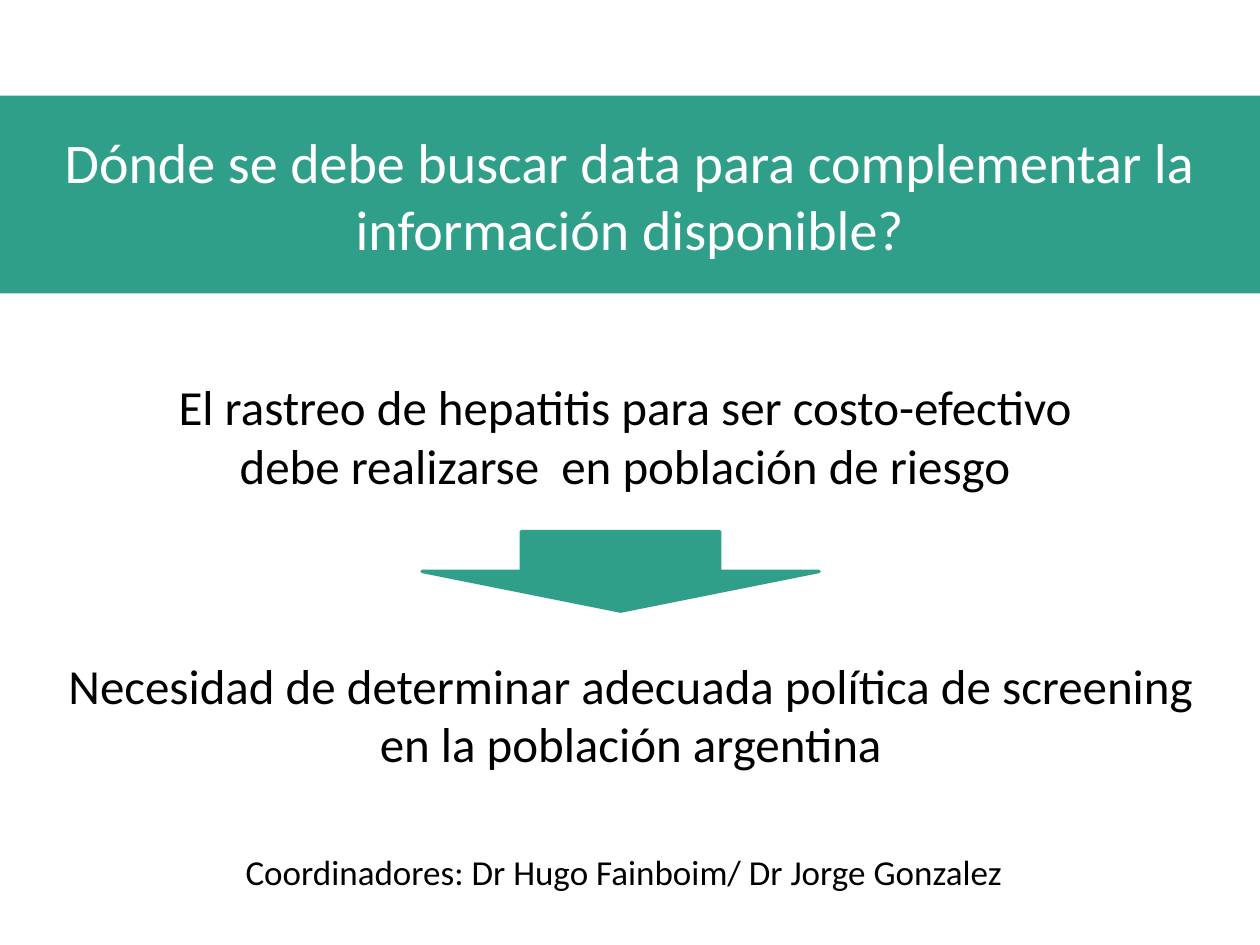
"""Build the slide on where to look for hepatitis screening data."""
from pptx import Presentation
from pptx.dml.color import RGBColor
from pptx.enum.shapes import MSO_SHAPE
from pptx.enum.text import MSO_ANCHOR, PP_ALIGN
from pptx.util import Inches, Pt

RECT, DOWN_ARROW = MSO_SHAPE.RECTANGLE, MSO_SHAPE.DOWN_ARROW
LEFT, CENTER = PP_ALIGN.LEFT, PP_ALIGN.CENTER
TOP, MIDDLE = MSO_ANCHOR.TOP, MSO_ANCHOR.MIDDLE
COLORS = {"green": "2F9F8A", "white": "FFFFFF", "black": "000000"}


def add_block(s, box, fill=None, shape=RECT):
    box = [Inches(v) for v in box]
    if fill is None:
        return s.shapes.add_textbox(*box)
    sp = s.shapes.add_shape(shape, *box)
    sp.shadow.inherit = False
    sp.fill.solid()
    sp.fill.fore_color.rgb = RGBColor.from_string(COLORS[fill])
    sp.line.fill.background()
    return sp


def write(sp, lines, size, color="black", align=CENTER, anchor=TOP):
    tf = sp.text_frame
    tf.word_wrap = True
    tf.vertical_anchor = anchor
    for i, line in enumerate(lines):
        p = tf.add_paragraph() if i else tf.paragraphs[0]
        p.alignment = align
        r = p.add_run()
        r.text = line
        for name, value in {"name": "Calibri", "size": Pt(size)}.items():
            setattr(r.font, name, value)
        r.font.color.rgb = RGBColor.from_string(COLORS[color])


prs = Presentation()
prs.slide_width, prs.slide_height = Inches(10), Inches(7.5)
s = prs.slides.add_slide(prs.slide_layouts[6])

title = add_block(s, (0, 0.76, 10, 1.57), "green")
write(title, ["Dónde se debe buscar data para complementar la información disponible?"],
      32, "white", anchor=MIDDLE)

texts = [
    ((0.39, 5.15, 9.23, 1.04), 28, CENTER,
     ["Necesidad de determinar adecuada política de screening",
      "en la población argentina"]),
    ((1.14, 2.94, 7.64, 1.04), 28, CENTER,
     ["El rastreo de hepatitis para ser costo-efectivo debe realizarse  en población de riesgo"]),
    ((1.85, 6.7, 6.32, 0.44), 20, LEFT,
     ["Coordinadores: Dr Hugo Fainboim/ Dr Jorge Gonzalez"]),
]
for box, size, align, lines in texts:
    write(add_block(s, box), lines, size, align=align)

arrow = add_block(s, (3.35, 4.22, 3.15, 0.63), "green", DOWN_ARROW)
arrow.line.color.rgb = RGBColor.from_string(COLORS["green"])
arrow.line.width = Pt(2)

prs.save("out.pptx")
